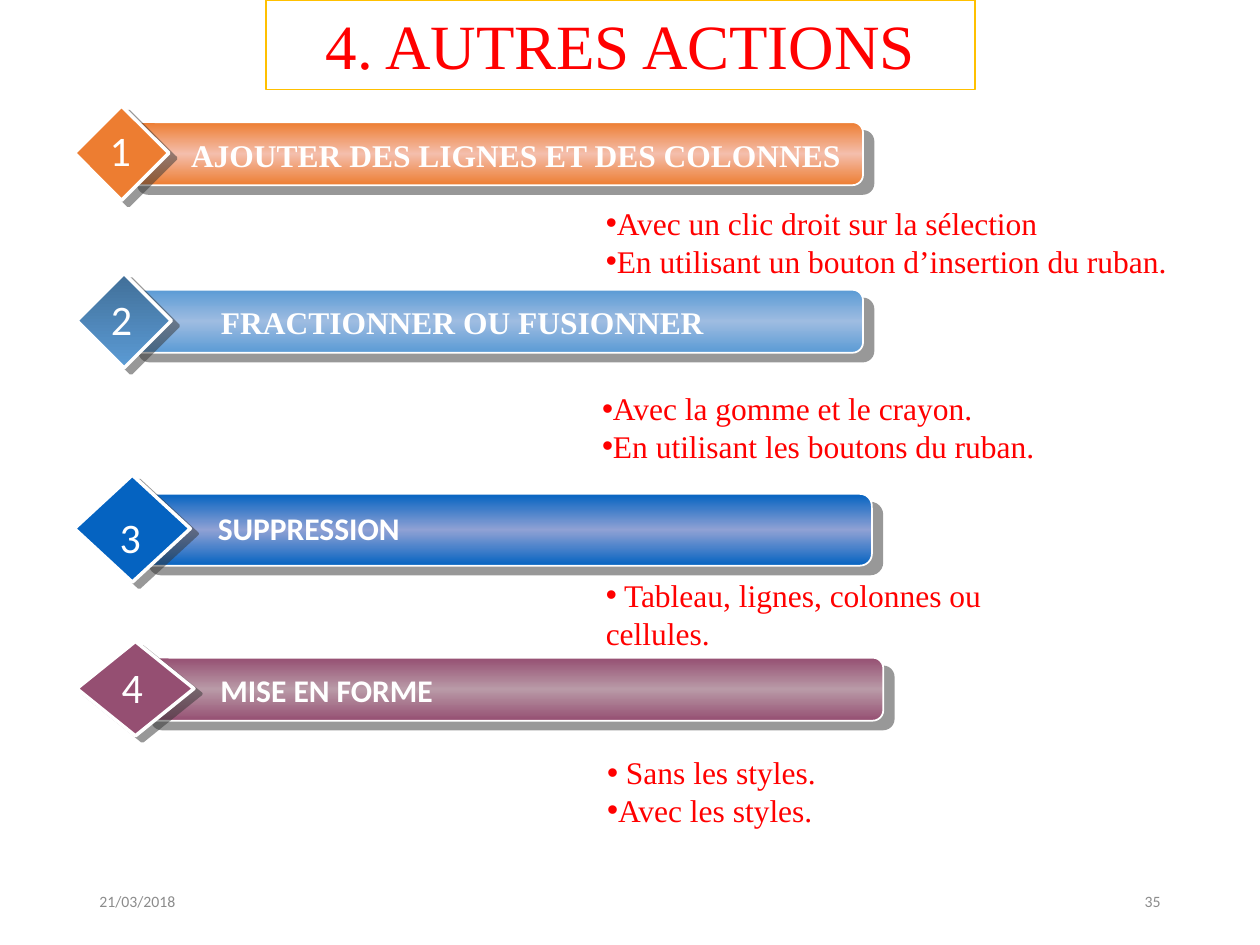
import pptx
import pptx.dml.color
import pptx.enum.shapes
import pptx.enum.text
import pptx.oxml.ns
import pptx.util
from lxml import etree

PX = 9144  # 100 px to the inch
SHAPE = pptx.enum.shapes.MSO_SHAPE
ALIGN = pptx.enum.text.PP_ALIGN
ANCHOR = pptx.enum.text.MSO_ANCHOR
qn = pptx.oxml.ns.qn

COLORS = {
    "white": "FFFFFF", "red": "FF0000", "gold": "FFC000", "grey": "8C8C8C",
    "shadow": "333333",
    "orange": "ED7D31", "orange_light": "F4BEAC",
    "blue": "5B9BD5", "blue_light": "9EBCE1", "blue_dark": "416F98",
    "navy": "0563C1", "navy_light": "8FA1D4",
    "plum": "954F72", "plum_light": "B99AA7",
}
SERIF, SANS = "Times New Roman", "Calibri"
FORMATS = {
    "title": {"name": SERIF, "size": 36, "color": "red"},
    "serif_heading": {"name": SERIF, "size": 18, "color": "white", "bold": True},
    "sans_heading": {"name": SANS, "size": 18, "color": "white", "bold": True},
    "number": {"name": SANS, "size": 24, "color": "white"},
    "detail": {"name": SERIF, "size": 18, "color": "red"},
    "footer": {"name": SANS, "size": 9, "color": "grey"},
}


def rgb(color):
    return pptx.dml.color.RGBColor.from_string(COLORS[color])


class SlideBuilder:
    def __init__(self, s):
        self.s = s
        self.shapes = s.shapes

    def start_group(self):
        self.shapes = self.s.shapes.add_group_shape().shapes

    def end_group(self):
        self.shapes = self.s.shapes

    def shape(self, kind, box, colors, line, width, shadow=None):
        """Several colors make an even top-to-bottom gradient."""
        sp = self.shapes.add_shape(kind, *(v * PX for v in box))
        if len(colors) == 1:
            sp.fill.solid()
            sp.fill.fore_color.rgb = rgb(colors[0])
        else:
            self.gradient(sp, colors)
        sp.line.color.rgb = rgb(line)
        sp.line.width = pptx.util.Pt(width)
        sp.shadow.inherit = False
        if shadow:
            self.cast_shadow(sp, *shadow)
        return sp

    def gradient(self, sp, colors):
        sp.fill.gradient()
        sp.fill.gradient_angle = 270
        stops = sp._element.spPr.find(".//" + qn("a:gsLst"))
        for stop in list(stops):
            stops.remove(stop)
        for i, color in enumerate(colors):
            pos = str(100000 * i // (len(colors) - 1))
            stop = etree.SubElement(stops, qn("a:gs"), pos=pos)
            etree.SubElement(stop, qn("a:srgbClr"), val=COLORS[color])

    def cast_shadow(self, sp, distance, angle):
        effects = sp._element.spPr.find(qn("a:effectLst"))
        outer = etree.SubElement(
            effects, qn("a:outerShdw"), blurRad="0", dist=str(int(distance * 12700)),
            dir=str(angle * 60000), algn="ctr", rotWithShape="0")
        color = etree.SubElement(outer, qn("a:srgbClr"), val=COLORS["shadow"])
        etree.SubElement(color, qn("a:alpha"), val="50000")

    def text(self, box, lines, style, **options):
        sp = self.shapes.add_textbox(*(v * PX for v in box))
        self.fill_text(sp.text_frame, lines, style, **options)

    def fill_text(self, tf, lines, style, align=ALIGN.LEFT, anchor=ANCHOR.TOP,
                  wrap=True, bullet=False, indent=0):
        tf.word_wrap = wrap
        tf.vertical_anchor = anchor
        for i, line in enumerate(lines):
            p = tf.paragraphs[0] if i == 0 else tf.add_paragraph()
            p.alignment = align
            pPr = p._p.get_or_add_pPr()
            if indent:
                pPr.set("marL", str(indent * PX))
            if bullet:
                etree.SubElement(pPr, qn("a:buFont"), typeface="Arial")
                etree.SubElement(pPr, qn("a:buChar"), char="•")
            r = p.add_run()
            r.text = line
            self.style_font(r.font, FORMATS[style])

    def style_font(self, font, values):
        for key, value in values.items():
            if key == "color":
                font.color.rgb = rgb(value)
            else:
                setattr(font, key, pptx.util.Pt(value) if key == "size" else value)

    def title(self, box, text):
        sp = self.shape(SHAPE.RECTANGLE, box, ["white"], "gold", 1)
        self.fill_text(sp.text_frame, [text], "title", align=ALIGN.CENTER)

    def banner(self, color, bar, diamond, diamond_colors, heading, text, style,
               number, digit, **options):
        """Draw a numbered diamond in front of a shaded heading bar."""
        self.start_group()
        self.shape(SHAPE.ROUNDED_RECTANGLE, bar, [color, color + "_light", color],
                   "white", 1, (7.8, 40))
        self.shape(SHAPE.DIAMOND, diamond, diamond_colors, "white", 2, (5, 37))
        self.text(heading, [text], style, **options)
        self.text(number, [digit], "number", align=ALIGN.CENTER, wrap=False)
        self.end_group()


CENTERED, INDENTED = {"align": ALIGN.CENTER}, {"indent": 22}
BANNERS = [
    ("orange", (101, 97, 584, 50), (59, 84, 75, 75), ["orange"],
     (126, 103, 567, 40), "AJOUTER DES LIGNES ET DES COLONNES", "serif_heading",
     (76, 94, 39, 50), CENTERED),
    ("blue", (102, 230, 583, 50), (61, 217, 75, 75), ["blue_dark", "blue"],
     (127, 236, 480, 40), "FRACTIONNER OU FUSIONNER", "serif_heading",
     (77, 228, 39, 50), CENTERED),
    ("navy", (110, 392, 582, 57), (59, 377, 92, 85), ["navy"],
     (141, 399, 559, 40), "SUPPRESSION", "sans_heading",
     (80, 401, 47, 57), INDENTED),
    ("plum", (112, 522, 589, 50), (61, 509, 93, 75), ["plum"],
     (143, 528, 465, 40), "MISE EN FORME", "sans_heading",
     (81, 520, 48, 50), INDENTED),
]
DETAILS = [
    ((471, 157, 477, 71), ["Avec un clic droit sur la sélection",
                           "En utilisant un bouton d’insertion du ruban."]),
    ((468, 304, 404, 71), ["Avec la gomme et le crayon.",
                           "En utilisant les boutons du ruban."]),
    ((471, 452, 344, 71), [" Tableau, lignes, colonnes ou cellules."]),
    ((472, 593, 305, 71), [" Sans les styles.", "Avec les styles."]),
]


def main():
    prs = pptx.Presentation()
    prs.slide_width, prs.slide_height = 1000 * PX, 750 * PX
    b = SlideBuilder(prs.slides.add_slide(prs.slide_layouts[6]))
    for i, (*parts, options) in enumerate(BANNERS, 1):
        b.banner(*parts, str(i), **options)
    b.title((211, 0, 563, 71), "4. AUTRES ACTIONS")
    for box, lines in DETAILS:
        b.text(box, lines, "detail", bullet=True)
    b.text((69, 695, 225, 40), ["21/03/2018"], "footer", anchor=ANCHOR.MIDDLE)
    b.text((706, 695, 225, 40), ["35"], "footer", anchor=ANCHOR.MIDDLE,
           align=ALIGN.RIGHT)
    prs.save("out.pptx")


if __name__ == "__main__":
    main()
